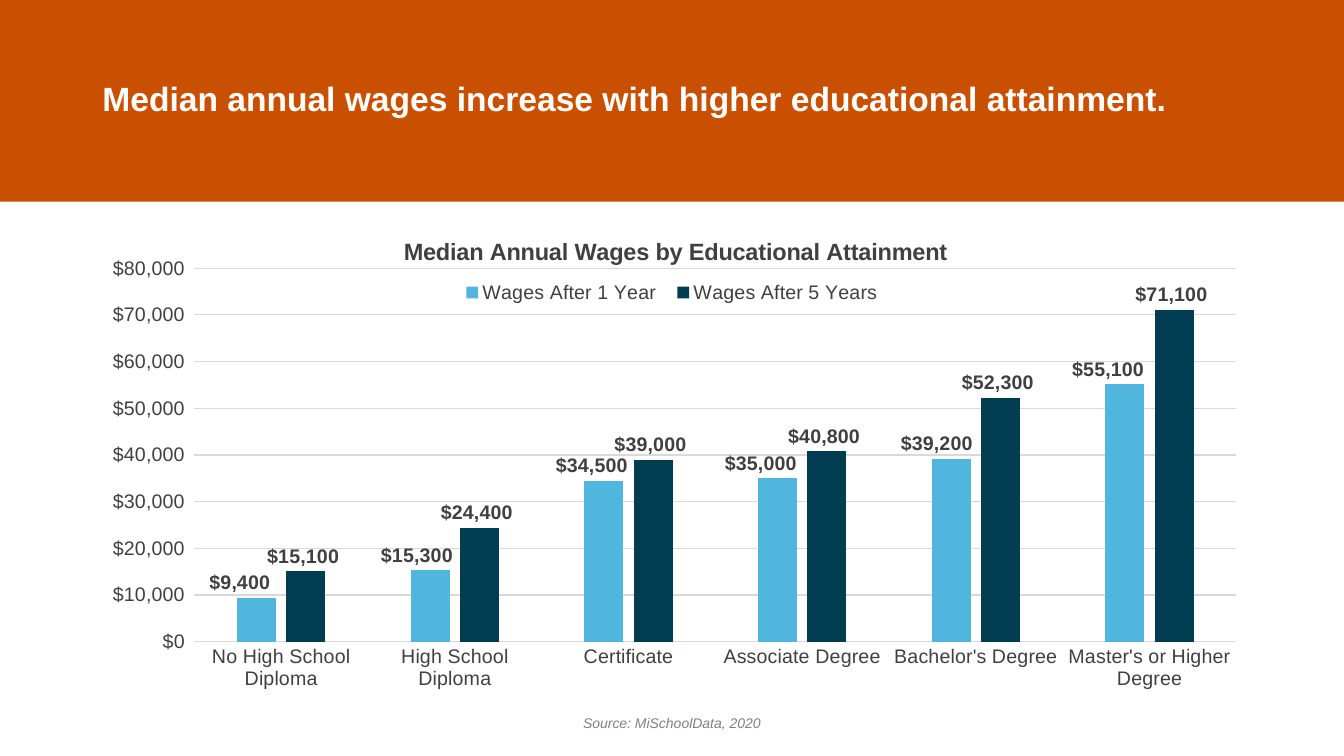
from lxml.etree import Element, SubElement
from pptx import Presentation
from pptx.chart.data import CategoryChartData
from pptx.dml.color import RGBColor
from pptx.enum.chart import XL_CHART_TYPE, XL_LABEL_POSITION, XL_LEGEND_POSITION, XL_TICK_MARK
from pptx.enum.shapes import MSO_SHAPE
from pptx.enum.text import MSO_ANCHOR, PP_ALIGN
from pptx.oxml.ns import qn
from pptx.util import Cm, Pt

ORANGE, LIGHT_BLUE, NAVY = "C95001", "50B6DE", "003D51"
WHITE, DARK, GREY, GRID = "FFFFFF", "404040", "808080", "D9D9D9"
DOLLARS = '"$"#,##0_);[Red]\\("$"#,##0\\)'

CATEGORIES = ["No High School Diploma", "High School Diploma", "Certificate",
              "Associate Degree", "Bachelor's Degree", "Master's or Higher Degree"]
WAGES = [
    ("Wages After 1 Year", LIGHT_BLUE, [9400, 15300, 34500, 35000, 39200, 55100]),
    ("Wages After 5 Years", NAVY, [15100, 24400, 39000, 40800, 52300, 71100]),
]
# Leftward shifts of the first-year labels, as shares of the chart width
LABEL_SHIFTS = [-0.012, -0.009, -0.008, -0.012, -0.01, -0.012]


def color(hex_code):
    return RGBColor.from_string(hex_code)


def style_font(font, size=14, fill=DARK, bold=False, italic=False):
    font.name, font.size = "Arial", Pt(size)
    font.bold, font.italic = bold, italic
    font.color.rgb = color(fill)


def write(tf, text, align=None, spacing=None, **fmt):
    p = tf.paragraphs[0]
    p.alignment = align
    p.line_spacing = spacing
    r = p.add_run()
    r.text = text
    style_font(r.font, **fmt)


def place(parent, index, **values):
    """Give a chart part a manual layout at its child index."""
    for old in parent.findall(qn("c:layout")):
        parent.remove(old)
    layout = Element(qn("c:layout"))
    manual = SubElement(layout, qn("c:manualLayout"))
    for key, value in values.items():
        SubElement(manual, qn("c:" + key)).set("val", str(value))
    parent.insert(index, layout)


class WageSlide:
    def __init__(self, prs):
        self.s = prs.slides.add_slide(prs.slide_layouts[6])

    def band(self, x, y, w, h, fill):
        sp = self.s.shapes.add_shape(MSO_SHAPE.RECTANGLE, Cm(x), Cm(y), Cm(w), Cm(h))
        sp.shadow.inherit = False
        sp.fill.solid()
        sp.fill.fore_color.rgb = color(fill)
        sp.line.fill.background()

    def text(self, x, y, w, h, text, anchor=MSO_ANCHOR.TOP, **fmt):
        tf = self.s.shapes.add_textbox(Cm(x), Cm(y), Cm(w), Cm(h)).text_frame
        tf.word_wrap = True
        tf.vertical_anchor = anchor
        write(tf, text, **fmt)

    def chart(self, x, y, w, h, title):
        data = CategoryChartData(number_format=DOLLARS)
        data.categories = CATEGORIES
        for name, _, values in WAGES:
            data.add_series(name, values)
        chart = self.s.shapes.add_chart(XL_CHART_TYPE.COLUMN_CLUSTERED,
                                        Cm(x), Cm(y), Cm(w), Cm(h), data).chart
        style_font(chart.font)

        # Title, legend and plot area
        chart.has_title = True
        write(chart.chart_title.text_frame, title, size=16.8, bold=True)
        place(chart.chart_title._element, 1, xMode="edge", yMode="edge", x=0.265, y=0.044)
        chart.has_legend = True
        chart.legend.position = XL_LEGEND_POSITION.TOP
        chart.legend.include_in_layout = False
        style_font(chart.legend.font)
        place(chart.legend._element, 1, xMode="edge", yMode="edge",
              x=0.31, y=0.135, w=0.38, h=0.06)
        place(chart._chartSpace.chart.plotArea, 0, layoutTarget="inner",
              xMode="edge", yMode="edge", x=0.088, y=0.116, w=0.899, h=0.753)

        self.axes(chart)
        self.columns(chart.plots[0])

    def axes(self, chart):
        for axis in (chart.category_axis, chart.value_axis):
            axis.major_tick_mark = axis.minor_tick_mark = XL_TICK_MARK.NONE
            style_font(axis.tick_labels.font)
        values = chart.value_axis
        values.minimum_scale, values.maximum_scale, values.major_unit = 0, 80000, 10000
        values.tick_labels.number_format = DOLLARS
        values.tick_labels.number_format_is_linked = False
        values.format.line.fill.background()
        for line in (chart.category_axis.format.line, values.major_gridlines.format.line):
            line.color.rgb = color(GRID)
            line.width = Pt(0.75)

    def columns(self, plot):
        plot.vary_by_categories = False
        plot.gap_width, plot.overlap = 219, -27
        for series, (_, fill, _) in zip(plot.series, WAGES):
            series.format.fill.solid()
            series.format.fill.fore_color.rgb = color(fill)
            labels = series.data_labels
            labels.show_value = True
            labels.number_format = DOLLARS
            labels.number_format_is_linked = False
            labels.position = XL_LABEL_POSITION.OUTSIDE_END
            style_font(labels.font, bold=True)
        for i, shift in enumerate(LABEL_SHIFTS):
            label = plot.series[0].points[i].data_label
            style_font(label.font, bold=True)
            label.position = XL_LABEL_POSITION.OUTSIDE_END
            place(label._get_or_add_dLbl(), 1, x=shift, y=0)


def main():
    prs = Presentation()
    prs.slide_width, prs.slide_height = Cm(33.87), Cm(19.05)
    slide = WageSlide(prs)

    # Header
    slide.band(0, 0, 33.87, 5.08, ORANGE)
    slide.text(2.33, 0.69, 29.21, 3.68,
               "Median annual wages increase with higher educational attainment.",
               anchor=MSO_ANCHOR.MIDDLE, spacing=0.9, size=24, fill=WHITE, bold=True)

    # Chart and its source
    slide.chart(2.33, 5.31, 29.21, 12.5, "Median Annual Wages by Educational Attainment")
    slide.text(1.04, 17.88, 31.78, 0.69, "Source: MiSchoolData, 2020",
               align=PP_ALIGN.CENTER, size=10, fill=GREY, italic=True)

    prs.save("out.pptx")


if __name__ == "__main__":
    main()
